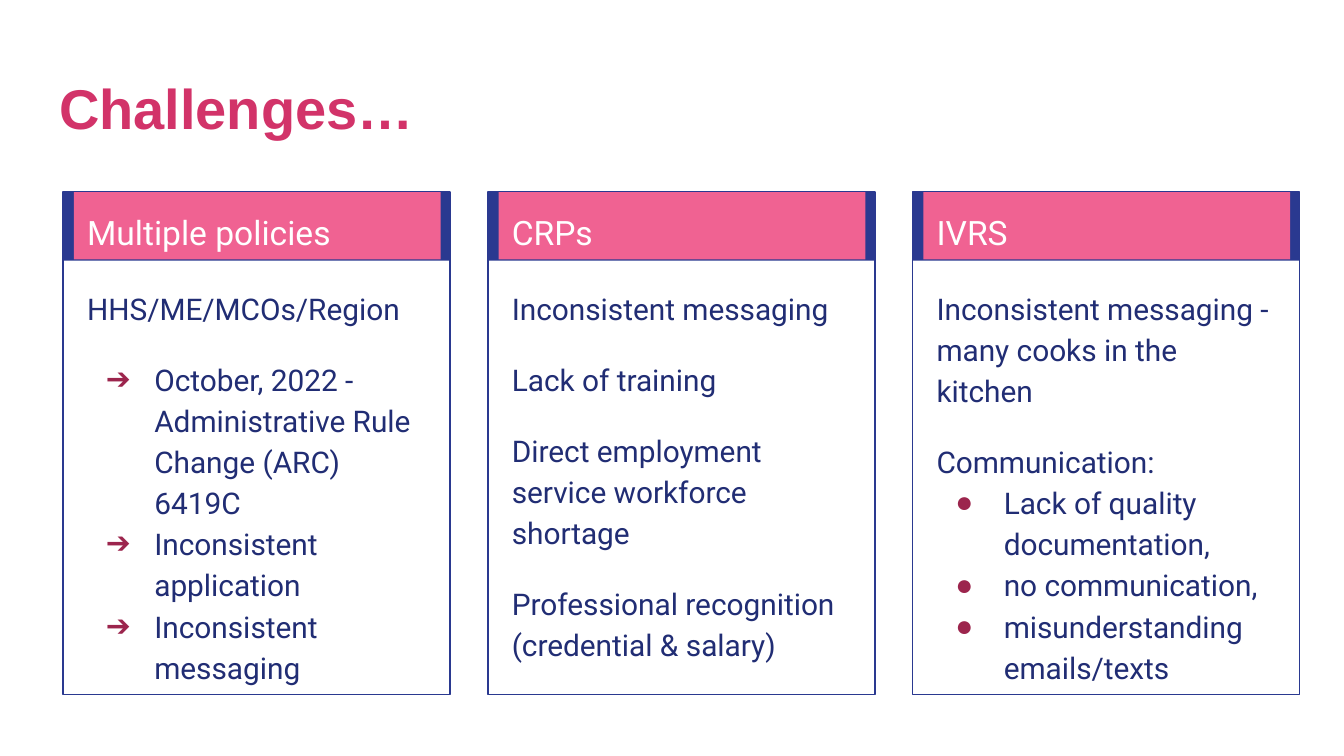
from lxml import etree
from pptx import Presentation
from pptx.dml.color import RGBColor
from pptx.enum.shapes import MSO_SHAPE
from pptx.enum.text import MSO_ANCHOR, PP_ALIGN
from pptx.oxml.ns import qn
from pptx.util import Inches, Pt

RECT = MSO_SHAPE.RECTANGLE
TOP = MSO_ANCHOR.TOP
LEFT = PP_ALIGN.LEFT
NAVY, PINK, INK, ROSE, MAROON, WHITE = (
    "2A3990", "F06292", "212D74", "D23369", "9C254D", "FFFFFF")
ARROW, DOT = "➔", "●"

CARDS = [
    ("Multiple policies", [
        ("HHS/ME/MCOs/Region", None, 0),
        ("October, 2022 - Administrative Rule Change (ARC) 6419C", ARROW, 16),
        ("Inconsistent application", ARROW, 0),
        ("Inconsistent messaging", ARROW, 0)]),
    ("CRPs", [
        ("Inconsistent messaging", None, 0),
        ("Lack of training", None, 16),
        ("Direct employment service workforce shortage", None, 16),
        ("Professional recognition (credential & salary)", None, 16)]),
    ("IVRS", [
        ("Inconsistent messaging - many cooks in the kitchen", None, 0),
        ("Communication:", None, 16),
        ("Lack of quality documentation,", DOT, 0),
        ("no communication,", DOT, 0),
        ("misunderstanding emails/texts", DOT, 0)]),
]


def color(code):
    return RGBColor.from_string(code)


def set_frame(frame):
    frame.word_wrap = True
    frame.vertical_anchor = TOP
    frame.margin_left = frame.margin_right = Inches(0.1)
    frame.margin_top = frame.margin_bottom = Inches(0.1)


def add_run(para, text, size, code, font="Roboto", bold=False):
    para.alignment = LEFT
    run = para.add_run()
    run.text = text
    run.font.name = font
    run.font.size = Pt(size)
    run.font.bold = bold
    run.font.color.rgb = color(code)


def add_bullet(para, mark):
    props = para._p.get_or_add_pPr()
    props.set("marL", str(Inches(0.5)))
    props.set("indent", str(Inches(-0.36)))
    tint = etree.SubElement(props, qn("a:buClr"))
    etree.SubElement(tint, qn("a:srgbClr")).set("val", MAROON)
    face = "Arial" if mark == DOT else "Roboto"
    etree.SubElement(props, qn("a:buFont")).set("typeface", face)
    etree.SubElement(props, qn("a:buChar")).set("char", mark)


def add_rect(slide, left, top, width, height, fill=None, line=None):
    shape = slide.shapes.add_shape(
        RECT, Inches(left), Inches(top), Inches(width), Inches(height))
    shape.shadow.inherit = False
    if fill:
        shape.fill.solid()
        shape.fill.fore_color.rgb = color(fill)
    else:
        shape.fill.background()
    if line:
        shape.line.color.rgb = color(line)
        shape.line.width = Pt(0.75)
    else:
        shape.line.fill.background()
    return shape


def add_title(slide, left, top, width, height):
    title = slide.shapes.title
    title.left, title.top = Inches(left), Inches(top)
    title.width, title.height = Inches(width), Inches(height)
    set_frame(title.text_frame)
    para = title.text_frame.paragraphs[0]
    para.line_spacing = 1.0
    add_run(para, "Challenges…", 30, ROSE, "Arial", True)


def add_card(slide, left, top, width, height, head, items):
    add_rect(slide, left, top, width, 0.51, fill=NAVY)
    add_rect(slide, left, top, width, height, line=NAVY)

    band = add_rect(slide, left + 0.08, top, width - 0.15, 0.5, fill=PINK)
    set_frame(band.text_frame)
    para = band.text_frame.paragraphs[0]
    para.line_spacing = 1.15
    add_run(para, head, 18, WHITE)

    body = slide.shapes.add_textbox(
        Inches(left + 0.08), Inches(top + 0.59),
        Inches(width - 0.17), Inches(height - 0.68))
    frame = body.text_frame
    set_frame(frame)
    for i, (text, mark, gap) in enumerate(items):
        para = frame.add_paragraph() if i else frame.paragraphs[0]
        para.line_spacing = 1.15
        para.space_before = Pt(gap)
        if mark:
            add_bullet(para, mark)
        add_run(para, text, 16, INK)


def main():
    deck = Presentation()
    deck.slide_width = Inches(10)
    deck.slide_height = deck.slide_width * 9 // 16
    slide = deck.slides.add_slide(deck.slide_layouts[5])
    add_title(slide, 0.34, 0.45, 9.32, 0.66)
    for i, (head, items) in enumerate(CARDS):
        add_card(slide, 0.47 + 3.16 * i, 1.43, 2.88, 3.74, head, items)
    deck.save("out.pptx")


if __name__ == "__main__":
    main()
